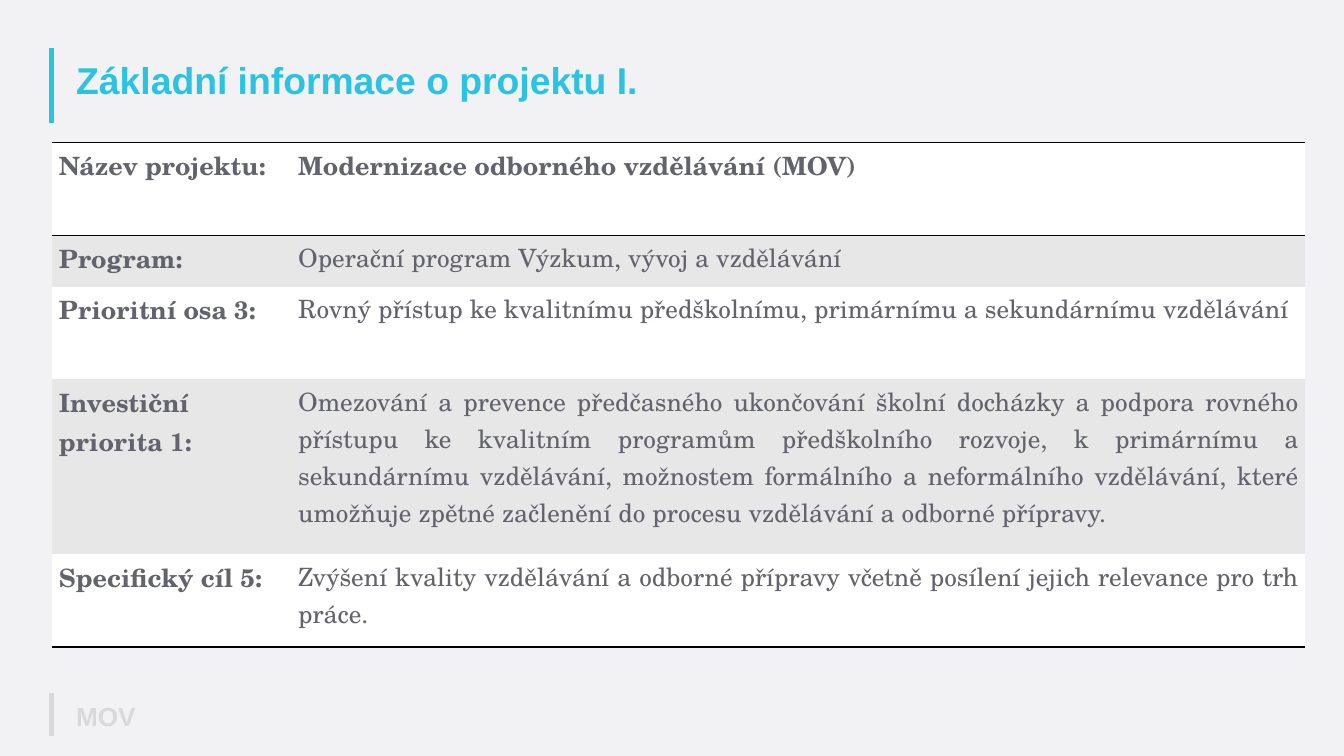
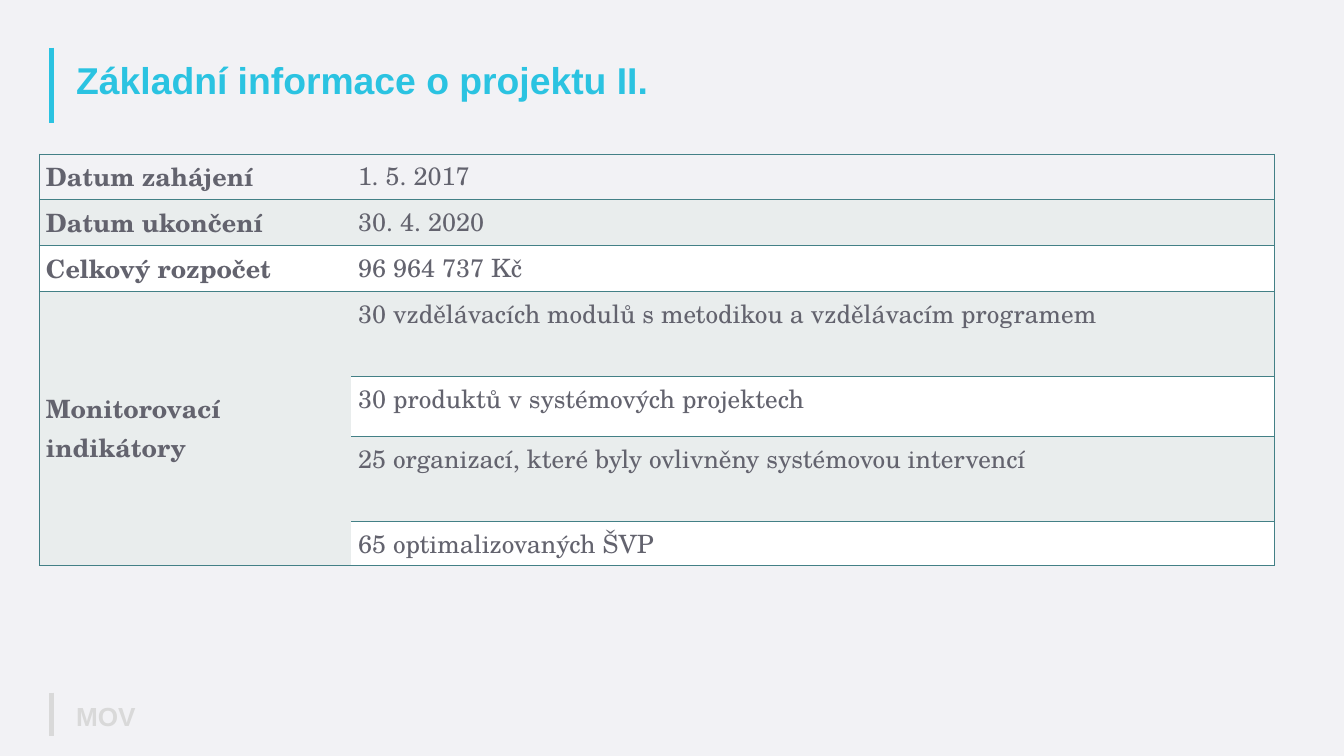
from dataclasses import dataclass

from lxml.etree import SubElement
from pptx import Presentation
from pptx.dml.color import RGBColor as Color
from pptx.enum.shapes import MSO_CONNECTOR as Connector
from pptx.enum.text import MSO_ANCHOR as Anchor, PP_ALIGN as Align
from pptx.oxml.ns import qn
from pptx.util import Pt


@dataclass(frozen=True)
class Theme:
    background: str = "F2F2F5"
    accent: str = "2BC3E1"
    footer: str = "D9D9D9"
    text: str = "63636E"
    white: str = "FFFFFF"
    grey_band: str = "E7E7E7"
    green_band: str = "E9EDED"
    black: str = "000000"
    green: str = "438086"
    heading_font: str = "Arial"
    table_font: str = "TeX Gyre Schola"
    title_size: int = 40
    footer_size: int = 28
    table_size: int = 27
    bar_width: int = 5


THEME = Theme()
PLAIN_TABLE_STYLE = "{2D5ABB26-0587-4C30-8999-92F81FD0307C}"
BAR_LEFT = 55.5
HEADING_LEFT = 74.5

PROJECT_ROWS = [
    ("Název projektu:", "Modernizace odborného vzdělávání (MOV)", 99.5),
    ("Program:", "Operační program Výzkum, vývoj a vzdělávání", 54.75),
    ("Prioritní osa 3:",
     "Rovný přístup ke kvalitnímu předškolnímu, primárnímu a sekundárnímu vzdělávání", 99.25),
    ("Investiční priorita 1:",
     "Omezování a prevence předčasného ukončování školní docházky a podpora rovného "
     "přístupu ke kvalitním programům předškolního rozvoje, k primárnímu a sekundárnímu "
     "vzdělávání, možnostem formálního a neformálního vzdělávání, které umožňuje zpětné "
     "začlenění do procesu vzdělávání a odborné přípravy.", 187.75),
    ("Specifický cíl 5:",
     "Zvýšení kvality vzdělávání a odborné přípravy včetně posílení jejich relevance "
     "pro trh práce.", 99.5),
]

INDICATOR_ROWS = [
    ("Datum zahájení", "1. 5. 2017", 49),
    ("Datum ukončení", "30. 4. 2020", 49),
    ("Celkový rozpočet", "96 964 737 Kč", 49),
    ("Monitorovací indikátory",
     "30 vzdělávacích modulů s metodikou a vzdělávacím programem", 91.5),
    (None, "30 produktů v systémových projektech", 64),
    (None, "25 organizací, které byly ovlivněny systémovou intervencí", 91.5),
    (None, "65 optimalizovaných ŠVP", 47),
]


def style_font(font, name, size, color, bold):
    font.name = name
    font.size = Pt(size)
    font.color.rgb = Color.from_string(color)
    font.bold = bold


def add_heading(page, text, top, height, size, color):
    box = page.shapes.add_textbox(Pt(HEADING_LEFT), Pt(top), Pt(1300), Pt(height))
    frame = box.text_frame
    frame.word_wrap = True
    frame.vertical_anchor = Anchor.MIDDLE
    para = frame.paragraphs[0]
    para.text = text
    para.line_spacing = 0.9
    style_font(para.font, THEME.heading_font, size, color, True)


def add_bar(page, top, bottom, color):
    bar = page.shapes.add_connector(
        Connector.STRAIGHT, Pt(BAR_LEFT), Pt(top), Pt(BAR_LEFT), Pt(bottom))
    bar.line.width = Pt(THEME.bar_width)
    bar.line.color.rgb = Color.from_string(color)
    SubElement(bar._element.spPr, qn("a:effectLst"))


def add_page(deck, title):
    page = deck.slides.add_slide(deck.slide_layouts[6])
    add_bar(page, 51, 132, THEME.accent)
    add_bar(page, 742, 789, THEME.footer)
    add_heading(page, title, 62.5, 51, THEME.title_size, THEME.accent)
    add_heading(page, "MOV", 746, 47, THEME.footer_size, THEME.footer)
    return page


def set_borders(cell, sides, color, width):
    properties = cell._tc.get_or_add_tcPr()
    for side in "LRTB":
        line = SubElement(properties, qn(f"a:ln{side}"), w=str(Pt(width)))
        if side in sides:
            fill = SubElement(line, qn("a:solidFill"))
            SubElement(fill, qn("a:srgbClr"), val=color)
        else:
            SubElement(line, qn("a:noFill"))


def fill_cell(cell, text, bold, align, fill):
    if fill:
        cell.fill.solid()
        cell.fill.fore_color.rgb = Color.from_string(fill)
    else:
        cell.fill.background()
    para = cell.text_frame.paragraphs[0]
    para.text = text
    para.alignment = align
    style_font(para.font, THEME.table_font, THEME.table_size, THEME.text, bold)


def add_info_table(page, rows, left, top, widths, fills, borders, line, bold_first=False):
    heights = [height for _, _, height in rows]
    frame = page.shapes.add_table(
        len(rows), 2, Pt(left), Pt(top), Pt(sum(widths)), Pt(sum(heights)))
    table = frame.table
    table.first_row = table.horz_banding = False
    table._tbl.tblPr.find(qn("a:tableStyleId")).text = PLAIN_TABLE_STYLE
    for column, width in zip(table.columns, widths):
        column.width = Pt(width)
    for index, (label, value, height) in enumerate(rows):
        table.rows[index].height = Pt(height)
        entries = [(label, True, Align.LEFT),
                   (value, bold_first and index == 0, Align.JUSTIFY)]
        for column, (text, bold, align) in enumerate(entries):
            if text is None:
                continue
            cell = table.cell(index, column)
            set_borders(cell, borders(index, column), *line)
            fill_cell(cell, text, bold, align, fills[index])
    return table


def project_borders(row, column):
    return {0: "TB", 1: "T", len(PROJECT_ROWS) - 1: "B"}.get(row, "")


def indicator_borders(row, column):
    return ("L" if column == 0 else "R") + "TB"


def add_project_page(deck):
    page = add_page(deck, "Základní informace o projektu I.")
    fills = [THEME.grey_band if row % 2 else THEME.white for row in range(len(PROJECT_ROWS))]
    add_info_table(page, PROJECT_ROWS, 56, 152.75, (256.25, 1085.75), fills,
                   project_borders, (THEME.black, 2), bold_first=True)


def add_indicator_page(deck):
    page = add_page(deck, "Základní informace o projektu II.")
    fills = [THEME.green_band if row % 2 else THEME.white for row in range(len(INDICATOR_ROWS))]
    fills[0] = None
    table = add_info_table(page, INDICATOR_ROWS, 42, 165, (334.5, 988.5), fills,
                           indicator_borders, (THEME.green, 1))
    indicators = table.cell(3, 0)
    indicators.merge(table.cell(len(INDICATOR_ROWS) - 1, 0))
    indicators.vertical_anchor = Anchor.MIDDLE


def main():
    deck = Presentation()
    deck.slide_width, deck.slide_height = Pt(1440), Pt(810)
    background = deck.slide_master.background.fill
    background.solid()
    background.fore_color.rgb = Color.from_string(THEME.background)
    add_project_page(deck)
    add_indicator_page(deck)
    deck.save("out.pptx")


if __name__ == "__main__":
    main()
